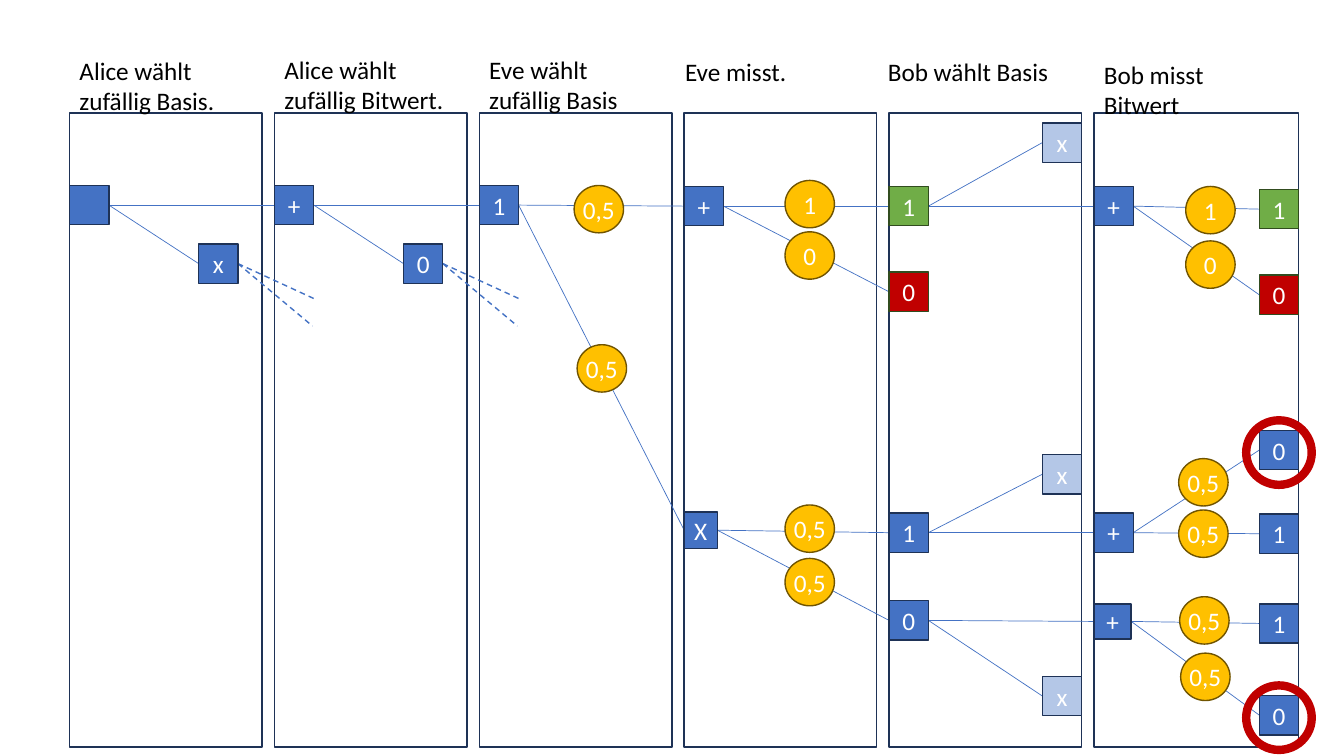
from dataclasses import dataclass

from lxml import etree
from pptx import Presentation, util as u
from pptx.dml.color import RGBColor
from pptx.enum import dml, shapes, text
from pptx.oxml import ns


@dataclass(frozen=True)
class Theme:
    font: str = "Calibri"
    size: int = 18
    black: str = "000000"
    white: str = "FFFFFF"
    blue: str = "4472C4"
    pale: str = "B4C7E7"
    navy: str = "1E3256"
    green: str = "70AD47"
    moss: str = "314C1F"
    red: str = "C00000"
    amber: str = "FFC000"
    brown: str = "705400"


T = Theme()

# Content: heading, left shift, top and height of its text box
HEADINGS = [
    ("Alice wählt zufällig Basis.", 0, 0.5, 0.71),
    ("Alice wählt zufällig Bitwert.", 0, 0.49, 0.71),
    ("Eve wählt zufällig Basis", 0, 0.49, 0.71),
    ("Eve misst.", -0.09, 0.51, 0.4),
    ("Bob wählt Basis", -0.11, 0.51, 0.4),
    ("Bob misst Bitwert", 0, 0.54, 0.71),
]

# Node: column, place in column, top, label, style
NODES = {
    "alice +": (0, "left", 1.84, "", "plain"),
    "alice x": (0, "inner", 2.42, "x", "plain"),
    "bit +": (1, "left", 1.84, "+", "plain"),
    "bit 0": (1, "inner", 2.42, "0", "plain"),
    "bit 1": (2, "left", 1.84, "1", "plain"),
    "eve +": (3, "left", 1.85, "+", "plain"),
    "eve x": (3, "left", 5.08, "X", "plain"),
    "eve + 1": (4, "left", 1.85, "1", "good"),
    "eve + 0": (4, "left", 2.7, "0", "bad"),
    "eve x 1": (4, "left", 5.09, "1", "plain"),
    "eve x 0": (4, "left", 5.96, "0", "plain"),
    "bob x top": (4, "right", 1.22, "x", "faded"),
    "bob x middle": (4, "right", 4.51, "x", "faded"),
    "bob x bottom": (4, "right", 6.71, "x", "faded"),
    "bob + top": (5, "left", 1.85, "+", "plain"),
    "bob + middle": (5, "left", 5.09, "+", "plain"),
    "bob + bottom": (5, "left", 5.99, "+", "plain"),
    "top 1": (5, "right", 1.88, "1", "good"),
    "top 0": (5, "right", 2.73, "0", "bad"),
    "middle 0": (5, "right", 4.27, "0", "plain"),
    "middle 1": (5, "right", 5.1, "1", "plain"),
    "bottom 1": (5, "right", 5.99, "1", "plain"),
    "bottom 0": (5, "right", 6.9, "0", "plain"),
}
SMALL = {"eve x": (0.33, 0.36), "bob + bottom": (0.37, 0.35)}

BRANCHES = {
    "alice +": ["bit +", "alice x"],
    "bit +": ["bit 1", "bit 0"],
    "bit 1": ["eve +", "eve x"],
    "eve +": ["eve + 1", "eve + 0"],
    "eve x": ["eve x 1", "eve x 0"],
    "eve + 1": ["bob + top", "bob x top"],
    "eve x 1": ["bob + middle", "bob x middle"],
    "eve x 0": ["bob + bottom", "bob x bottom"],
    "bob + top": ["top 1", "top 0"],
    "bob + middle": ["middle 1", "middle 0"],
    "bob + bottom": ["bottom 1", "bottom 0"],
}
OPEN_ENDS = ["alice x", "bit 0"]
WRONG_BITS = ["middle 0", "bottom 0"]

# Probability: column, offset in column, top, label
CHANCES = [
    (2, 0.94, 1.84, "0,5"), (2, 0.97, 3.42, "0,5"),
    (3, 1, 1.79, "1"), (3, 1, 2.3, "0"),
    (3, 1, 5.01, "0,5"), (3, 1, 5.54, "0,5"),
    (5, 0.91, 1.85, "1"), (5, 0.91, 2.39, "0"),
    (5, 0.84, 5.06, "0,5"), (5, 0.84, 4.55, "0,5"),
    (5, 0.85, 5.92, "0,5"), (5, 0.86, 6.48, "0,5"),
]

STYLES = {
    "plain": (T.blue, T.navy),
    "faded": (T.pale, T.navy),
    "good": (T.green, T.moss),
    "bad": (T.red, T.moss),
}

# Grid
LEFT, PITCH, FRAME_TOP, FRAME_BOTTOM = 0.69, 2.032, 1.12, 7.41
WIDTHS = [1.91] * 5 + [2.03]
SIDE, INNER = 0.39, 1.28
RECT, OVAL = shapes.MSO_SHAPE.RECTANGLE, shapes.MSO_SHAPE.OVAL

prs = Presentation()
prs.slide_width, prs.slide_height = u.Inches(13.33), u.Inches(7.5)
s = prs.slides.add_slide(prs.slide_layouts[6])


def column_left(col):
    return LEFT + col * PITCH


def node_box(name):
    col, place, top, _, _ = NODES[name]
    offset = {"left": 0, "inner": INNER, "right": WIDTHS[col] - SIDE}[place]
    return (column_left(col) + offset, top, *SMALL.get(name, (SIDE, SIDE)))


def write(sp, label, color=T.white, align=text.PP_ALIGN.CENTER,
          anchor=text.MSO_ANCHOR.MIDDLE, side_inset=0.1):
    tf = sp.text_frame
    tf.word_wrap = True
    tf.vertical_anchor = anchor
    tf.margin_left = tf.margin_right = u.Inches(side_inset)
    p = tf.paragraphs[0]
    p.alignment = align
    r = p.add_run()
    r.text = label
    r.font.name, r.font.size = T.font, u.Pt(T.size)
    r.font.color.rgb = RGBColor.from_string(color)


def add_shape(kind, box, fill, line, weight=1):
    sp = s.shapes.add_shape(kind, *map(u.Inches, box))
    sp.shadow.inherit = False
    if fill:
        sp.fill.solid()
        sp.fill.fore_color.rgb = RGBColor.from_string(fill)
    else:
        sp.fill.background()
    sp.line.color.rgb = RGBColor.from_string(line)
    sp.line.width = u.Pt(weight)
    return sp


def add_line(x1, y1, x2, y2, weight=0.5, dashed=False):
    line = s.shapes.add_connector(shapes.MSO_CONNECTOR.STRAIGHT,
                                  *map(u.Inches, (x1, y1, x2, y2)))
    line.line.color.rgb = RGBColor.from_string(T.blue)
    line.line.width = u.Pt(weight)
    if dashed:
        line.line.dash_style = dml.MSO_LINE.DASH
    etree.SubElement(line._element.spPr, ns.qn("a:effectLst"))


def right_middle(name):
    x, y, w, h = node_box(name)
    return x + w, y + h / 2


# Column frames and headings
for col, (heading, shift, top, height) in enumerate(HEADINGS):
    x = column_left(col)
    add_shape(RECT, (x, FRAME_TOP, WIDTHS[col], FRAME_BOTTOM - FRAME_TOP),
              None, T.navy)
    tb = s.shapes.add_textbox(*map(u.Inches, (x + shift, top, 1.9, height)))
    write(tb, heading, color=T.black, align=text.PP_ALIGN.LEFT,
          anchor=text.MSO_ANCHOR.TOP)

# Branches of the tree
for parent, children in BRANCHES.items():
    for child in children:
        x, y, _, h = node_box(child)
        add_line(*right_middle(parent), x, y + h / 2)

for name in OPEN_ENDS:
    x, y = right_middle(name)
    for dx, dy in [(0.74, 0.62), (0.76, 0.35)]:
        add_line(x, y, x + dx, y + dy, weight=1, dashed=True)

# Nodes
for name, (_, _, _, label, style) in NODES.items():
    sp = add_shape(RECT, node_box(name), *STYLES[style])
    if label:
        write(sp, label)

# Probabilities
for col, offset, top, label in CHANCES:
    sp = add_shape(OVAL, (column_left(col) + offset, top, 0.49, 0.47),
                   T.amber, T.brown)
    write(sp, label, side_inset=0)

# Rings around wrong bits
for name in WRONG_BITS:
    x, y, _, _ = node_box(name)
    add_shape(OVAL, (x - 0.13, y - 0.1, 0.65, 0.64), None, T.red, weight=6)

prs.save("out.pptx")
